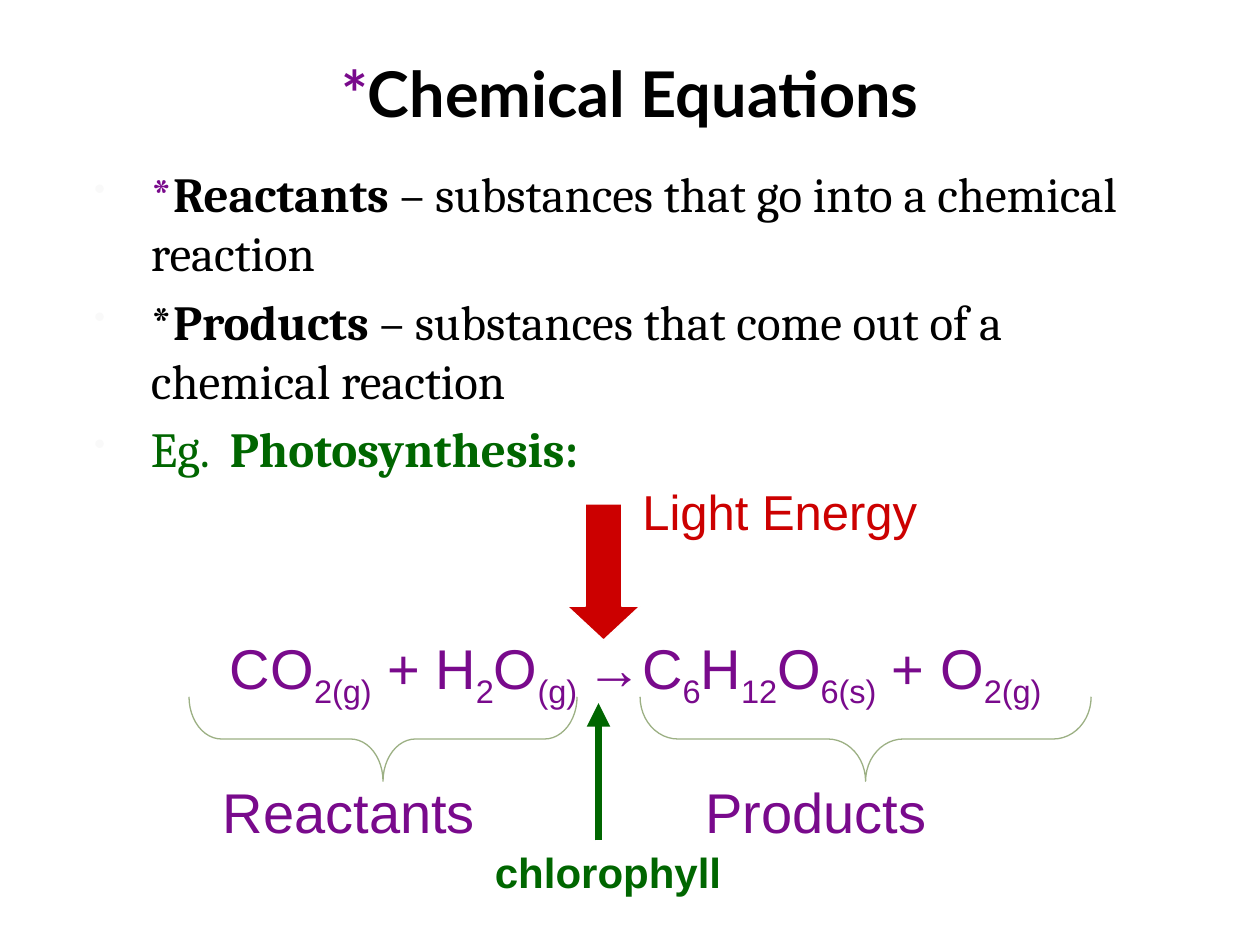
from dataclasses import dataclass

from lxml import etree
from pptx import Presentation
from pptx.dml.color import RGBColor
from pptx.enum.shapes import MSO_CONNECTOR, MSO_SHAPE
from pptx.enum.text import MSO_ANCHOR, MSO_AUTO_SIZE, PP_ALIGN
from pptx.oxml.ns import qn
from pptx.util import Inches, Pt


@dataclass(frozen=True)
class Theme:
    title_font: str = "Lato"
    body_font: str = "Cambria"
    label_font: str = "Arial"
    title_size: int = 36
    body_size: int = 28
    equation_size: int = 32
    catalyst_size: int = 24
    black: str = "000000"
    white: str = "FFFFFF"
    purple: str = "790A8C"
    green: str = "006600"
    red: str = "CC0000"
    brace: str = "9CB084"
    bullet: str = "F9F9F9"


THEME = Theme()

# Content: runs are (text, colour, bold)
TITLE = [("*", THEME.purple, True), ("Chemical Equations", THEME.black, True)]
DEFINITIONS = [
    [("*", THEME.purple, True), ("Reactants ", THEME.black, True),
     ("– substances that go into a chemical reaction", THEME.black, False)],
    [("*Products ", THEME.black, True),
     ("– substances that come out of a chemical reaction", THEME.black, False)],
    [("Eg.  ", THEME.green, False), ("Photosynthesis:", THEME.green, True)],
]
# Normal and subscript text alternate
EQUATION = ["CO", "2(g)", " + H", "2", "O", "(g) ", "→C", "6", "H", "12",
            "O", "6(s)", " + O", "2(g)"]
# Sides of the equation: name, label left, brace left, brace span, brace curve
SIDES = [("Reactants", 1.67, 1.5, 3.08, 0.385),
         ("Products", 5.5, 5.08, 3.58, 0.448)]
BRACE_TOP, BRACE_DEPTH, SIDE_LABEL_TOP = 5.53, 0.67, 6.12
# Other labels: text, box, size, colour, bold
LABELS = [
    ("Light Energy", (5, 3.77, 2.92, 0.57), THEME.body_size, THEME.red, False),
    ("chlorophyll", (3.83, 6.67, 2.17, 0.5), THEME.catalyst_size, THEME.green, True),
] + [(name, (left, SIDE_LABEL_TOP, 2.67, 0.63), THEME.equation_size, THEME.purple, False)
     for name, left, *_ in SIDES]


def color(value):
    return RGBColor.from_string(value)


def add_text(slide, box, paragraphs, font, size, align=PP_ALIGN.LEFT):
    shape = slide.shapes.add_textbox(*map(Inches, box))
    frame = shape.text_frame
    frame.word_wrap = True
    for index, runs in enumerate(paragraphs):
        paragraph = frame.paragraphs[0] if index == 0 else frame.add_paragraph()
        paragraph.alignment = align
        paragraph.font.name = font
        paragraph.font.size = Pt(size)
        for text, run_color, bold in runs:
            run = paragraph.add_run()
            run.text = text
            run.font.name = font
            run.font.size = Pt(size)
            run.font.bold = bold
            run.font.color.rgb = color(run_color)
    return frame


def add_bullet(paragraph):
    properties = paragraph._p.get_or_add_pPr()
    properties.set("marL", str(Inches(0.6)))
    properties.set("indent", str(Inches(-0.45)))
    bullet_color = etree.SubElement(properties, qn("a:buClr"))
    etree.SubElement(bullet_color, qn("a:srgbClr"), val=THEME.bullet)
    etree.SubElement(properties, qn("a:buSzPct"), val="65000")
    etree.SubElement(properties, qn("a:buChar"), char="•")


def add_outline(slide, kind, box, adjustments, line_color):
    shape = slide.shapes.add_shape(kind, *map(Inches, box))
    shape.shadow.inherit = False
    shape.fill.background()
    shape.line.color.rgb = color(line_color)
    shape.line.width = Pt(0.75)
    for index, value in enumerate(adjustments):
        shape.adjustments[index] = value
    return shape


def add_brace(slide, left, span, curve):
    # The brace is drawn upright, then turned about its centre
    box = (left + (span - BRACE_DEPTH) / 2, BRACE_TOP + (BRACE_DEPTH - span) / 2,
           BRACE_DEPTH, span)
    brace = add_outline(slide, MSO_SHAPE.LEFT_BRACE, box, (curve, 0.5), THEME.brace)
    brace.rotation = 270


def main():
    presentation = Presentation()
    presentation.slide_width, presentation.slide_height = Inches(10), Inches(7.5)
    slide = presentation.slides.add_slide(presentation.slide_layouts[6])

    # Title and definitions
    title = add_text(slide, (0.5, 0.3, 9, 0.87), [TITLE], THEME.title_font,
                     THEME.title_size, PP_ALIGN.CENTER)
    title.vertical_anchor = MSO_ANCHOR.MIDDLE
    body = add_text(slide, (0.5, 1.25, 9, 2.92), DEFINITIONS, THEME.body_font,
                    THEME.body_size)
    for paragraph in body.paragraphs:
        paragraph.space_after = Pt(0.2 * THEME.body_size)
        add_bullet(paragraph)

    # Equation with subscripts
    equation = add_text(slide, (0.42, 4.98, 9.25, 0.63),
                        [[(text, THEME.purple, False) for text in EQUATION]],
                        THEME.label_font, THEME.equation_size, PP_ALIGN.CENTER)
    equation.auto_size = MSO_AUTO_SIZE.SHAPE_TO_FIT_TEXT
    for run in equation.paragraphs[0].runs[1::2]:
        run.font._element.set("baseline", "-25000")

    # Braces under both sides
    for _, _, left, span, curve in SIDES:
        add_brace(slide, left, span, curve)

    # Light energy arrow
    light = add_outline(slide, MSO_SHAPE.DOWN_ARROW, (4.5, 4, 0.58, 1.08),
                        (0.5, 0.464), THEME.white)
    light.fill.solid()
    light.fill.fore_color.rgb = color(THEME.red)

    # Labels
    for text, box, size, text_color, bold in LABELS:
        label = add_text(slide, box, [[(text, text_color, bold)]], THEME.label_font, size)
        label.auto_size = MSO_AUTO_SIZE.SHAPE_TO_FIT_TEXT

    # Chlorophyll arrow
    arrow = slide.shapes.add_connector(MSO_CONNECTOR.STRAIGHT, Inches(4.75), Inches(6.67),
                                       Inches(4.75), Inches(5.58))
    arrow.line.color.rgb = color(THEME.green)
    arrow.line.width = Pt(4.5)
    etree.SubElement(arrow.line._get_or_add_ln(), qn("a:tailEnd"), type="triangle")
    etree.SubElement(arrow._element.spPr, qn("a:effectLst"))

    presentation.save("out.pptx")


if __name__ == "__main__":
    main()
